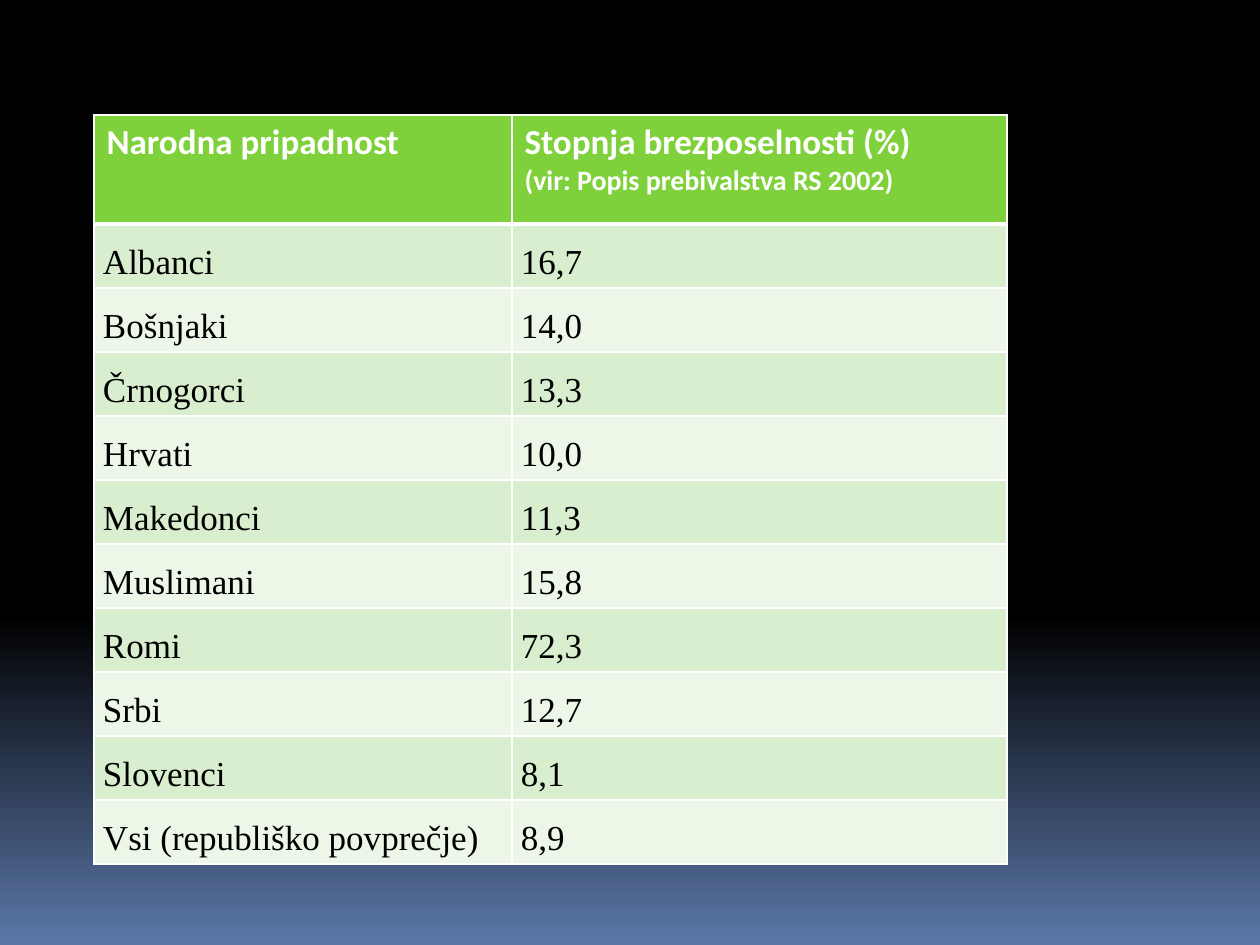
import copy
import pptx
import pptx.util
import pptx.dml.color
import pptx.oxml
import pptx.oxml.ns

SCALE = 914400 // 126
COLORS = {
    "night": "000000",
    "horizon": "5B77A8",
    "header": "7FD13B",
    "odd": "D8EECE",
    "even": "ECF7E8",
    "line": "FFFFFF",
    "header_text": "FFFFFF",
    "body_text": "000000",
}
HEADER_FONT = {"name": "Calibri", "bold": True, "size": pptx.util.Pt(20)}
SOURCE_FONT = {**HEADER_FONT, "size": pptx.util.Pt(16)}
BODY_FONT = {"name": "Times New Roman", "bold": False, "size": pptx.util.Pt(20)}
BODY_MARGINS = {
    "margin_left": 9 * SCALE,
    "margin_right": 9 * SCALE,
    "margin_top": 0,
    "margin_bottom": 0,
}
HEADERS = [
    [("Narodna pripadnost", HEADER_FONT)],
    [
        ("Stopnja brezposelnosti (%)", HEADER_FONT),
        ("(vir: Popis prebivalstva RS 2002)", SOURCE_FONT),
    ],
]
RATES = [
    ("Albanci", "16,7"),
    ("Bošnjaki", "14,0"),
    ("Črnogorci", "13,3"),
    ("Hrvati", "10,0"),
    ("Makedonci", "11,3"),
    ("Muslimani", "15,8"),
    ("Romi", "72,3"),
    ("Srbi", "12,7"),
    ("Slovenci", "8,1"),
    ("Vsi (republiško povprečje)", "8,9"),
]


def rgb(name):
    return pptx.dml.color.RGBColor.from_string(COLORS[name])


def set_values(target, values):
    for name, value in values.items():
        setattr(target, name, value)


def paint_background(page):
    fill = page.background.fill
    fill.gradient()
    fill.gradient_angle = 270
    stop_list = page._element.find(".//" + pptx.oxml.ns.qn("a:gsLst"))
    stop_list.insert(0, copy.deepcopy(stop_list[0]))
    stops = [(0, "night"), (0.65, "night"), (1, "horizon")]
    for stop, (position, color) in zip(fill.gradient_stops, stops):
        stop.position = position
        stop.color.rgb = rgb(color)


def add_borders(cell, bottom_width):
    properties = cell._tc.get_or_add_tcPr()
    widths = {"lnL": 1, "lnR": 1, "lnT": 1, "lnB": bottom_width}
    for index, (side, width) in enumerate(widths.items()):
        line = pptx.oxml.parse_xml(
            f'<a:{side} {pptx.oxml.ns.nsdecls("a")} w="{pptx.util.Pt(width)}">'
            f'<a:solidFill><a:srgbClr val="{COLORS["line"]}"/></a:solidFill>'
            f"</a:{side}>"
        )
        properties.insert(index, line)


def fill_cell(cell, lines, fill, text_color, spacing, bottom_width):
    cell.fill.solid()
    cell.fill.fore_color.rgb = rgb(fill)
    add_borders(cell, bottom_width)
    frame = cell.text_frame
    for index, (text, font) in enumerate(lines):
        para = frame.add_paragraph() if index else frame.paragraphs[0]
        para.line_spacing = spacing
        span = para.add_run()
        span.text = text
        set_values(span.font, font)
        span.font.color.rgb = rgb(text_color)


def build_rate_table(page, box):
    left, top, width, height = box
    header_height = 109
    row_height = (height - header_height) // len(RATES)
    first_width = 418
    frame = page.shapes.add_table(
        len(RATES) + 1, 2, *(length * SCALE for length in box)
    )
    table = frame.table
    for column, column_width in zip(table.columns, (first_width, width - first_width)):
        column.width = column_width * SCALE
    for index, row in enumerate(table.rows):
        row.height = (row_height if index else header_height) * SCALE
    for column, lines in enumerate(HEADERS):
        fill_cell(table.cell(0, column), lines, "header", "header_text", 1.0, 3)
    for index, values in enumerate(RATES, start=1):
        for column, text in enumerate(values):
            cell = table.cell(index, column)
            set_values(cell, BODY_MARGINS)
            fill = "odd" if index % 2 else "even"
            fill_cell(cell, [(text, BODY_FONT)], fill, "body_text", 1.5, 1)


def main():
    deck = pptx.Presentation()
    set_values(deck, {"slide_width": 1260 * SCALE, "slide_height": 945 * SCALE})
    page = deck.slides.add_slide(deck.slide_layouts[6])
    paint_background(page)
    build_rate_table(page, (94, 115, 913, 749))
    deck.save("out.pptx")


if __name__ == "__main__":
    main()
